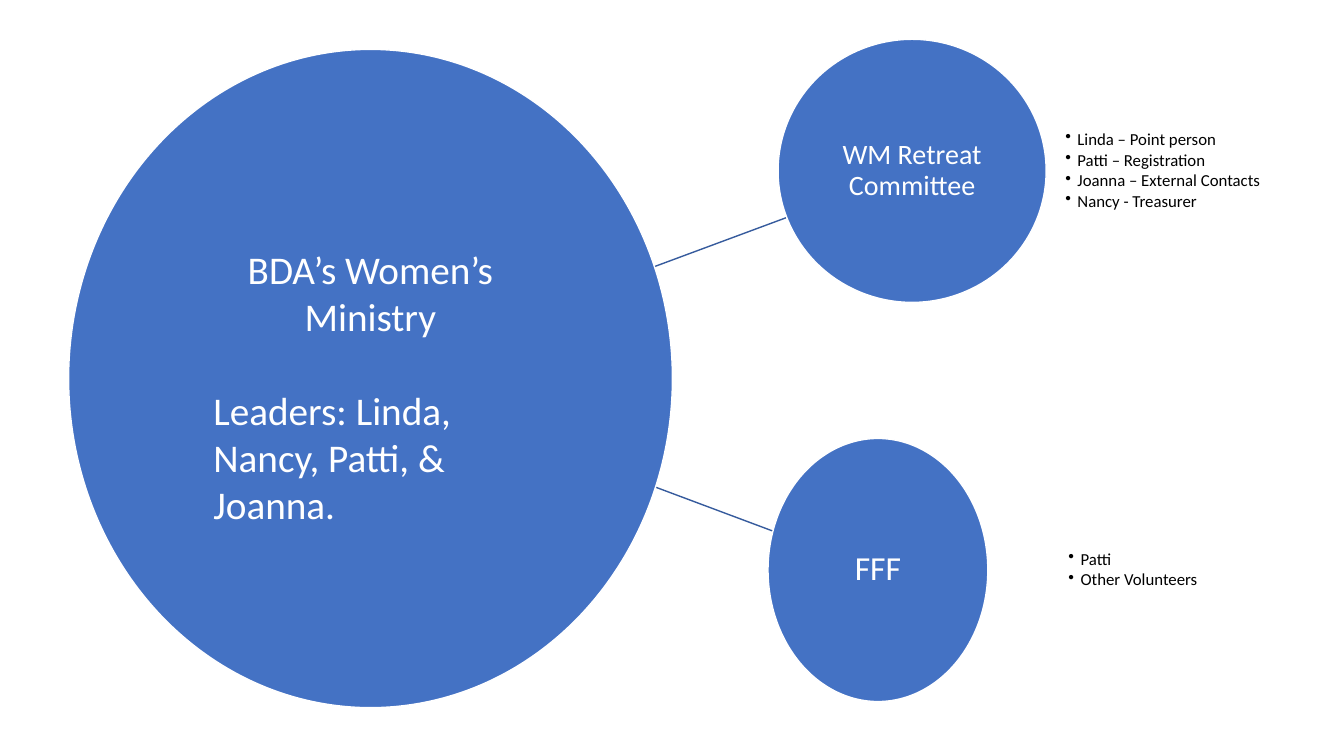
import pptx
import pptx.util
import pptx.dml.color
import pptx.enum.shapes
import pptx.enum.text
import lxml.etree

Pt = pptx.util.Pt
Align = pptx.enum.text.PP_ALIGN
Anchor = pptx.enum.text.MSO_ANCHOR
Kind = pptx.enum.shapes.MSO_SHAPE
Joint = pptx.enum.shapes.MSO_CONNECTOR

# Content
HUB = {
    "box": (49, 35.3, 431.3, 470.2),
    "note": (145.4, 171.4, 238.3, 211),
    "title": "BDA’s Women’s Ministry",
    "leads": "Leaders: Linda, Nancy, Patti, & Joanna.",
}
TEAMS = [
    {"name": "WM Retreat Committee", "size": 20,
     "box": (555.8, 28.1, 191.5, 187.9), "list": 761,
     "link": (365.8, 228.2, 561.6, 155.5),
     "roles": ["Linda – Point person", "Patti – Registration",
               "Joanna – External Contacts", "Nancy - Treasurer"]},
    {"name": "FFF", "size": 24,
     "box": (548.6, 313.2, 157, 187.9), "list": 763.2,
     "link": (365.8, 309.6, 552.2, 379.4),
     "roles": ["Patti", "Other Volunteers"]},
]
THEME = {"font": "Calibri", "fill": "4472C4", "link": "365B9D",
         "light": "FFFFFF", "dark": "000000", "hub": 28, "role": 12}
WIDE, HIGH = 960, 540
GAP = 34
DENT = 8.64


def tint(key):
    return pptx.dml.color.RGBColor.from_string(THEME[key])


def apply(item, form):
    for key, value in form.items():
        setattr(item, key, value)


def write(shape, lines, size, ink, inset, anchor, forms):
    frame = shape.text_frame
    edges = ("margin_left", "margin_top", "margin_right", "margin_bottom")
    apply(frame, {"word_wrap": True, "vertical_anchor": anchor,
                  **{edge: Pt(gap) for edge, gap in zip(edges, inset)}})
    for i, (line, form) in enumerate(zip(lines, forms)):
        para = frame.paragraphs[0] if i == 0 else frame.add_paragraph()
        apply(para, form)
        run = para.add_run()
        run.text = line
        apply(run.font, {"name": THEME["font"], "size": Pt(size)})
        run.font.color.rgb = tint(ink)
    return frame


def oval(box):
    shape = slide.shapes.add_shape(Kind.OVAL, *map(Pt, box))
    shape.shadow.inherit = False
    shape.fill.solid()
    shape.fill.fore_color.rgb = tint("fill")
    shape.line.color.rgb = tint("light")
    shape.line.width = Pt(1)
    return shape


def bullet(para):
    props = para._p.get_or_add_pPr()
    props.set("marL", str(Pt(DENT)))
    props.set("indent", str(-Pt(DENT)))
    mark = lxml.etree.SubElement(props, pptx.oxml.ns.qn("a:buChar"))
    mark.set("char", "•")


deck = pptx.Presentation()
apply(deck, {"slide_width": Pt(WIDE), "slide_height": Pt(HIGH)})
slide = deck.slides.add_slide(deck.slide_layouts[6])

# Links behind the circles
for team in TEAMS:
    link = slide.shapes.add_connector(Joint.STRAIGHT, *map(Pt, team["link"]))
    link.line.color.rgb = tint("link")
    link.line.width = Pt(1)
    lxml.etree.SubElement(link._element.spPr, pptx.oxml.ns.qn("a:effectLst"))

# Ministry circle and its text
oval(HUB["box"])
note = slide.shapes.add_textbox(*map(Pt, HUB["note"]))
write(note, [HUB["title"], HUB["leads"]], THEME["hub"], "light",
      (7.2, 3.6, 7.2, 3.6), Anchor.TOP,
      [{"alignment": Align.CENTER},
       {"alignment": Align.LEFT, "space_before": Pt(GAP)}])

# Team circles with their role lists
for team in TEAMS:
    write(oval(team["box"]), [team["name"]], team["size"], "light",
          (1, 1, 1, 1), Anchor.MIDDLE,
          [{"alignment": Align.CENTER, "line_spacing": 0.9}])
    left, top, high = team["list"], team["box"][1], team["box"][3]
    area = (left, top, WIDE - left, high)
    roles = slide.shapes.add_textbox(*map(Pt, area))
    form = {"alignment": Align.LEFT, "line_spacing": 0.9,
            "space_after": Pt(1.8)}
    frame = write(roles, team["roles"], THEME["role"], "dark",
                  (0, 0, 0, 0), Anchor.MIDDLE, [form] * len(team["roles"]))
    for para in frame.paragraphs:
        bullet(para)

deck.save("out.pptx")
